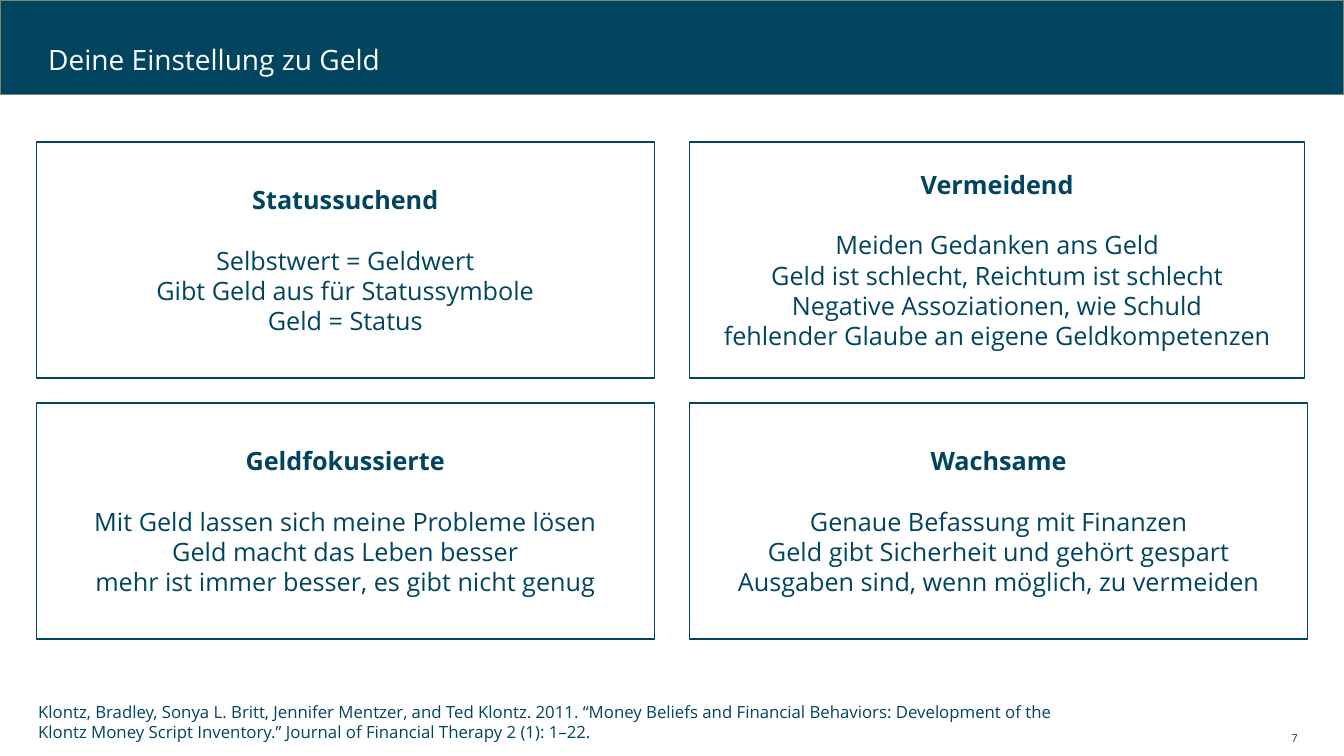
import pptx
import pptx.dml.color
import pptx.enum.shapes
import pptx.enum.text
import pptx.util

Inches = pptx.util.Inches
Pt = pptx.util.Pt
ALIGN = pptx.enum.text.PP_ALIGN
ANCHOR = pptx.enum.text.MSO_ANCHOR
NAVY = "004460"
WHITE = "FFFFFF"


def rgb(value):
    return pptx.dml.color.RGBColor.from_string(value)


class Deck:
    font = "Open Sans"

    def __init__(self, prs):
        self.s = prs.slides.add_slide(prs.slide_layouts[6])

    def rect(self, x, y, w, h, line, fill=None):
        sp = self.s.shapes.add_shape(
            pptx.enum.shapes.MSO_SHAPE.RECTANGLE,
            Inches(x), Inches(y), Inches(w), Inches(h))
        sp.shadow.inherit = False
        if fill:
            sp.fill.solid()
            sp.fill.fore_color.rgb = rgb(fill)
        else:
            sp.fill.background()
        sp.line.color.rgb = rgb(line)
        sp.line.width = Pt(1)
        return sp

    def run(self, p, text, size, color=NAVY, bold=False):
        r = p.add_run()
        r.text = text
        r.font.name = self.font
        r.font.size = Pt(size)
        r.font.bold = bold
        r.font.color.rgb = rgb(color)

    def text(self, x, y, w, h, text, size, color=NAVY,
             align=ALIGN.LEFT, anchor=ANCHOR.MIDDLE, spacing=None):
        sp = self.s.shapes.add_textbox(Inches(x), Inches(y), Inches(w), Inches(h))
        tf = sp.text_frame
        tf.word_wrap = True
        tf.vertical_anchor = anchor
        p = tf.paragraphs[0]
        p.alignment = align
        p.line_spacing = spacing
        self.run(p, text, size, color)

    def card(self, x, y, w, h, heading, lines):
        tf = self.rect(x, y, w, h, NAVY).text_frame
        tf.word_wrap = True
        tf.vertical_anchor = ANCHOR.MIDDLE
        p = tf.paragraphs[0]
        p.alignment = ALIGN.CENTER
        p.space_after = Pt(21.6)
        self.run(p, heading, 18, bold=True)
        for line in lines:
            p = tf.add_paragraph()
            p.alignment = ALIGN.CENTER
            self.run(p, line, 18)


def main():
    prs = pptx.Presentation()
    prs.slide_width = Inches(13.33)
    prs.slide_height = Inches(7.5)
    deck = Deck(prs)

    deck.rect(0, 0, 13.33, 0.94, "7A866C", NAVY)
    deck.text(0.38, 0.34, 11.02, 0.54, "Deine Einstellung zu Geld", 20, WHITE, spacing=0.9)

    money_types = [
        ("Statussuchend", 6.13, [
            "Selbstwert = Geldwert",
            "Gibt Geld aus für Statussymbole",
            "Geld = Status"]),
        ("Vermeidend", 6.1, [
            "Meiden Gedanken ans Geld",
            "Geld ist schlecht, Reichtum ist schlecht",
            "Negative Assoziationen, wie Schuld",
            "fehlender Glaube an eigene Geldkompetenzen"]),
        ("Geldfokussierte", 6.13, [
            "Mit Geld lassen sich meine Probleme lösen",
            "Geld macht das Leben besser",
            "mehr ist immer besser, es gibt nicht genug"]),
        ("Wachsame", 6.13, [
            "Genaue Befassung mit Finanzen",
            "Geld gibt Sicherheit und gehört gespart",
            "Ausgaben sind, wenn möglich, zu vermeiden"]),
    ]
    for i, (heading, width, lines) in enumerate(money_types):
        row, col = divmod(i, 2)
        deck.card(0.36 + 6.48 * col, 1.41 + 2.59 * row, width, 2.34, heading, lines)

    deck.text(
        0.28, 6.91, 10.55, 0.5,
        "Klontz, Bradley, Sonya L. Britt, Jennifer Mentzer, and Ted Klontz. 2011. "
        "“Money Beliefs and Financial Behaviors: Development of the Klontz Money "
        "Script Inventory.” Journal of Financial Therapy 2 (1): 1–22.",
        12, anchor=ANCHOR.TOP)
    deck.text(9.42, 7.2, 3.55, 0.24, "7", 8, align=ALIGN.RIGHT)

    prs.save("out.pptx")


if __name__ == "__main__":
    main()
